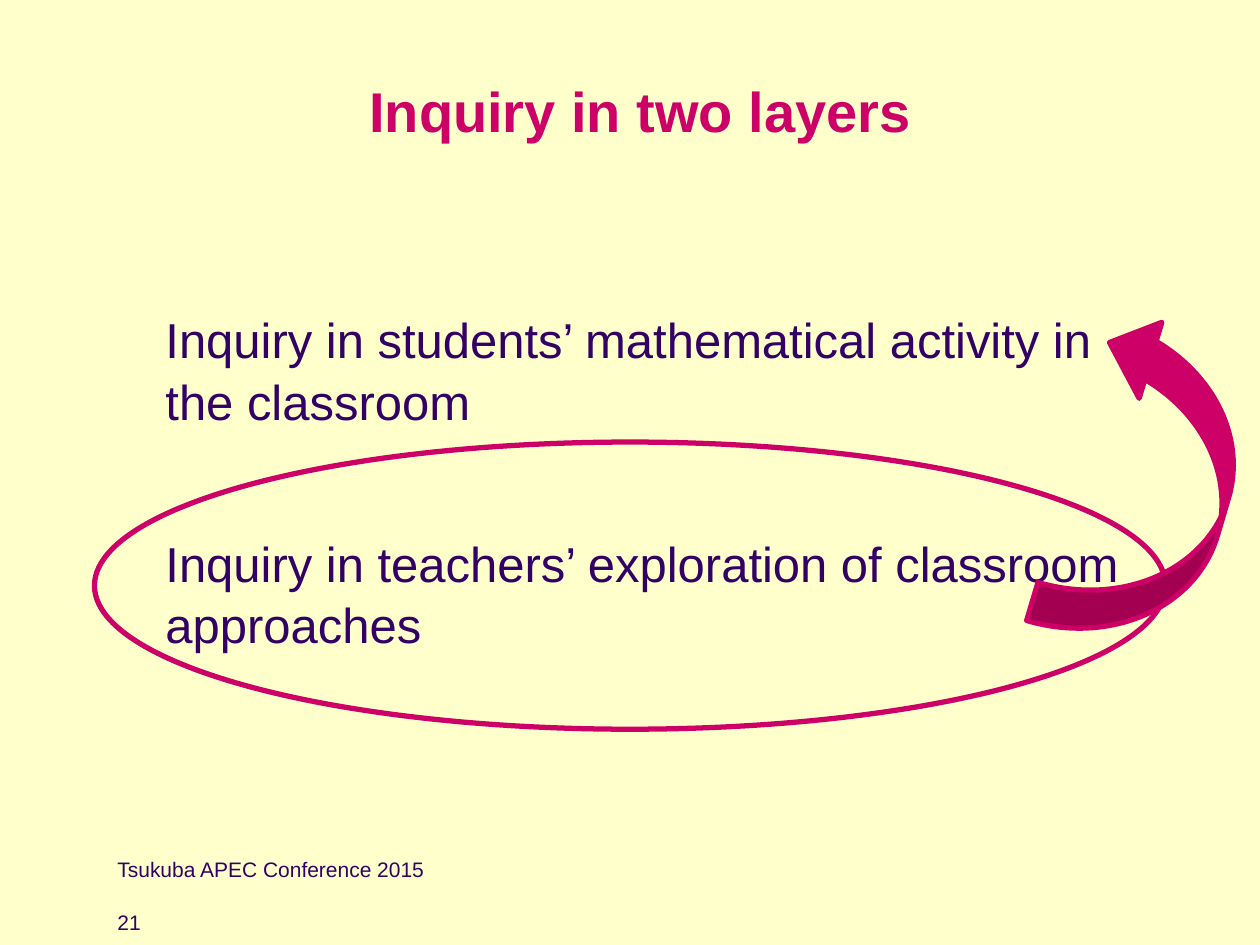
from dataclasses import dataclass

from pptx import Presentation
from pptx import util as u
from pptx.dml.color import RGBColor
from pptx.enum import shapes, text


@dataclass(frozen=True)
class Theme:
    font: str = "Arial"
    paper: RGBColor = RGBColor(0xFF, 0xFF, 0xCC)
    accent: RGBColor = RGBColor(0xCC, 0x00, 0x66)
    ink: RGBColor = RGBColor(0x33, 0x00, 0x66)
    title: int = 32
    body: int = 28
    small: int = 12
    stroke: int = 3


class Deck:
    """Places elements on a grid of 12 columns and 18 rows."""

    COLS, ROWS = 12, 18

    def __init__(self, theme):
        self.theme = theme
        self.prs = Presentation()
        self.prs.slide_width, self.prs.slide_height = u.Inches(10), u.Inches(7.5)
        self.s = self.prs.slides.add_slide(self.prs.slide_layouts[6])
        fill = self.s.background.fill
        fill.solid()
        fill.fore_color.rgb = theme.paper

    def box(self, col, row, cols, rows):
        w = self.prs.slide_width / self.COLS
        h = self.prs.slide_height / self.ROWS
        return [round(n) for n in (col * w, row * h, cols * w, rows * h)]

    def text(self, place, lines, size, color=None, bold=False, align=text.PP_ALIGN.LEFT,
             anchor=text.MSO_ANCHOR.TOP, inset=(0.1, 0.05), gap=0, spacing=1.0):
        tf = self.s.shapes.add_textbox(*self.box(*place)).text_frame
        tf.word_wrap = True
        tf.vertical_anchor = anchor
        tf.margin_left, tf.margin_top = map(u.Inches, inset)
        for i, line in enumerate(lines):
            p = tf.add_paragraph() if i else tf.paragraphs[0]
            p.text = line
            p.alignment = align
            p.line_spacing = spacing
            if i:
                p.space_before = u.Pt(gap)
            p.font.name, p.font.size, p.font.bold = self.theme.font, u.Pt(size), bold
            p.font.color.rgb = color or self.theme.ink

    def shape(self, kind, place, fill=None, rotation=0, adjustments=()):
        sp = self.s.shapes.add_shape(kind, *self.box(*place))
        sp.shadow.inherit = False
        sp.rotation = rotation
        for i, value in enumerate(adjustments):
            sp.adjustments[i] = value
        if fill is None:
            sp.fill.background()
        else:
            sp.fill.solid()
            sp.fill.fore_color.rgb = fill
        sp.line.color.rgb = self.theme.accent
        sp.line.width = u.Pt(self.theme.stroke)


def main():
    theme = Theme()
    deck = Deck(theme)

    # Title
    deck.text((1, 0.8, 10.2, 2.6), ["Inquiry in two layers"], theme.title, theme.accent,
              bold=True, align=text.PP_ALIGN.CENTER, anchor=text.MSO_ANCHOR.MIDDLE)

    # The two layers
    deck.text((1, 4, 10.2, 11.2),
              ["Inquiry in students’ mathematical activity in the classroom",
               "Inquiry in teachers’ exploration of classroom approaches"],
              theme.body, inset=(0.48, 0.77), gap=57, spacing=1.05)

    # Footer and slide number
    deck.text((1, 16.2, 7.5, 1), ["Tsukuba APEC Conference 2015"], theme.small)
    deck.text((1, 17.2, 0.8, 0.5), ["21"], theme.small)

    # Ring round the second layer, arrow back to the first
    kinds = shapes.MSO_SHAPE
    deck.shape(kinds.OVAL, (0.9, 8.42, 10.2, 5.47))
    deck.shape(kinds.CURVED_UP_ARROW, (9.38, 7.73, 3.14, 3.02), theme.accent,
               rotation=286.6, adjustments=(0.25, 0.5, 0.28))

    deck.prs.save("out.pptx")


if __name__ == "__main__":
    main()
